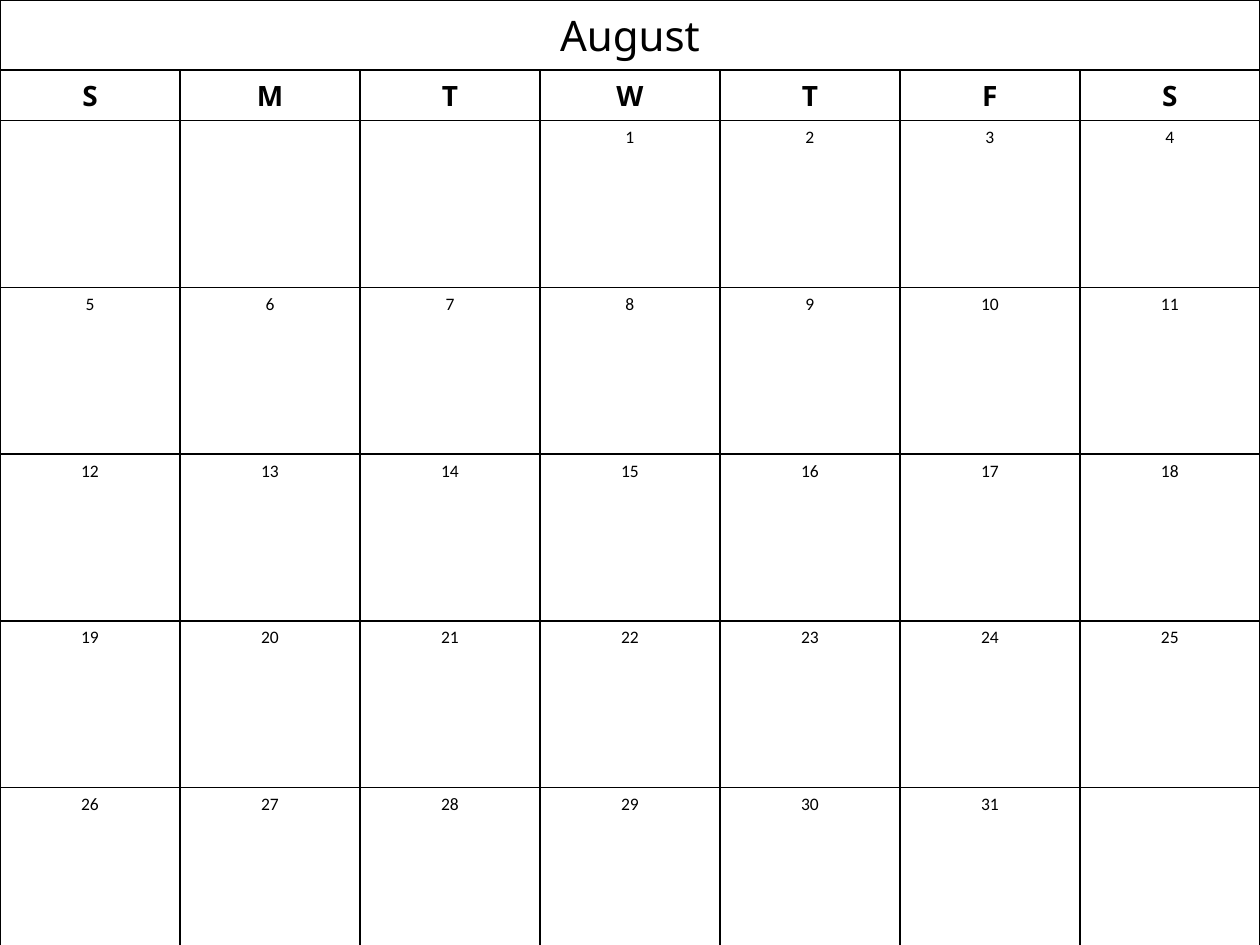
from lxml import etree
from pptx import Presentation
from pptx.dml.color import RGBColor
from pptx.enum.text import PP_ALIGN
from pptx.oxml.ns import qn
from pptx.util import Inches, Pt

CENTER = PP_ALIGN.CENTER
BLACK = "000000"
WHITE = "FFFFFF"
MONTH = "August"
WEEKDAYS = "SMTWTFS"
FIRST_WEEKDAY = 3
DAY_COUNT = 31
WEEK_COUNT = 5
TITLE_HEIGHT = Inches(0.51)
WEEKDAY_HEIGHT = Inches(0.37)


def color(value):
    return RGBColor.from_string(value)


def write_text(cell, text, *, size, font="Noto Sans", bold=False):
    paragraph = cell.text_frame.paragraphs[0]
    paragraph.alignment = CENTER
    run = paragraph.add_run()
    run.text = text
    run.font.size = Pt(size)
    run.font.name = font
    run.font.bold = bold
    run.font.color.rgb = color(BLACK)


def style_cell(cell):
    cell.fill.solid()
    cell.fill.fore_color.rgb = color(WHITE)
    properties = cell._tc.get_or_add_tcPr()
    for index, side in enumerate(("lnL", "lnR", "lnT", "lnB")):
        line = etree.Element(qn(f"a:{side}"), w=str(Pt(1)))
        fill = etree.SubElement(line, qn("a:solidFill"))
        etree.SubElement(fill, qn("a:srgbClr"), val=BLACK)
        properties.insert(index, line)


def add_calendar(slide, left, top, width, height):
    column_count = len(WEEKDAYS)
    shape = slide.shapes.add_table(WEEK_COUNT + 2, column_count, left, top, width, height)
    table = shape.table
    week_height = (height - TITLE_HEIGHT - WEEKDAY_HEIGHT) // WEEK_COUNT
    row_heights = [TITLE_HEIGHT, WEEKDAY_HEIGHT] + [week_height] * WEEK_COUNT
    for row, row_height in zip(table.rows, row_heights):
        row.height = row_height
    for column in table.columns:
        column.width = width // column_count
    for cell in table.iter_cells():
        style_cell(cell)

    title = table.cell(0, 0)
    title.merge(table.cell(0, column_count - 1))
    write_text(title, MONTH, size=24)
    for column_index, weekday in enumerate(WEEKDAYS):
        write_text(table.cell(1, column_index), weekday, size=16, bold=True)
    for day in range(1, DAY_COUNT + 1):
        week, weekday_index = divmod(FIRST_WEEKDAY + day - 1, column_count)
        write_text(table.cell(week + 2, weekday_index), str(day), size=10, font="Calibri")


def main():
    presentation = Presentation()
    presentation.slide_width = Inches(10)
    presentation.slide_height = Inches(7.5)
    slide = presentation.slides.add_slide(presentation.slide_layouts[6])
    add_calendar(slide, 0, 0, presentation.slide_width, presentation.slide_height)
    presentation.save("out.pptx")


if __name__ == "__main__":
    main()
